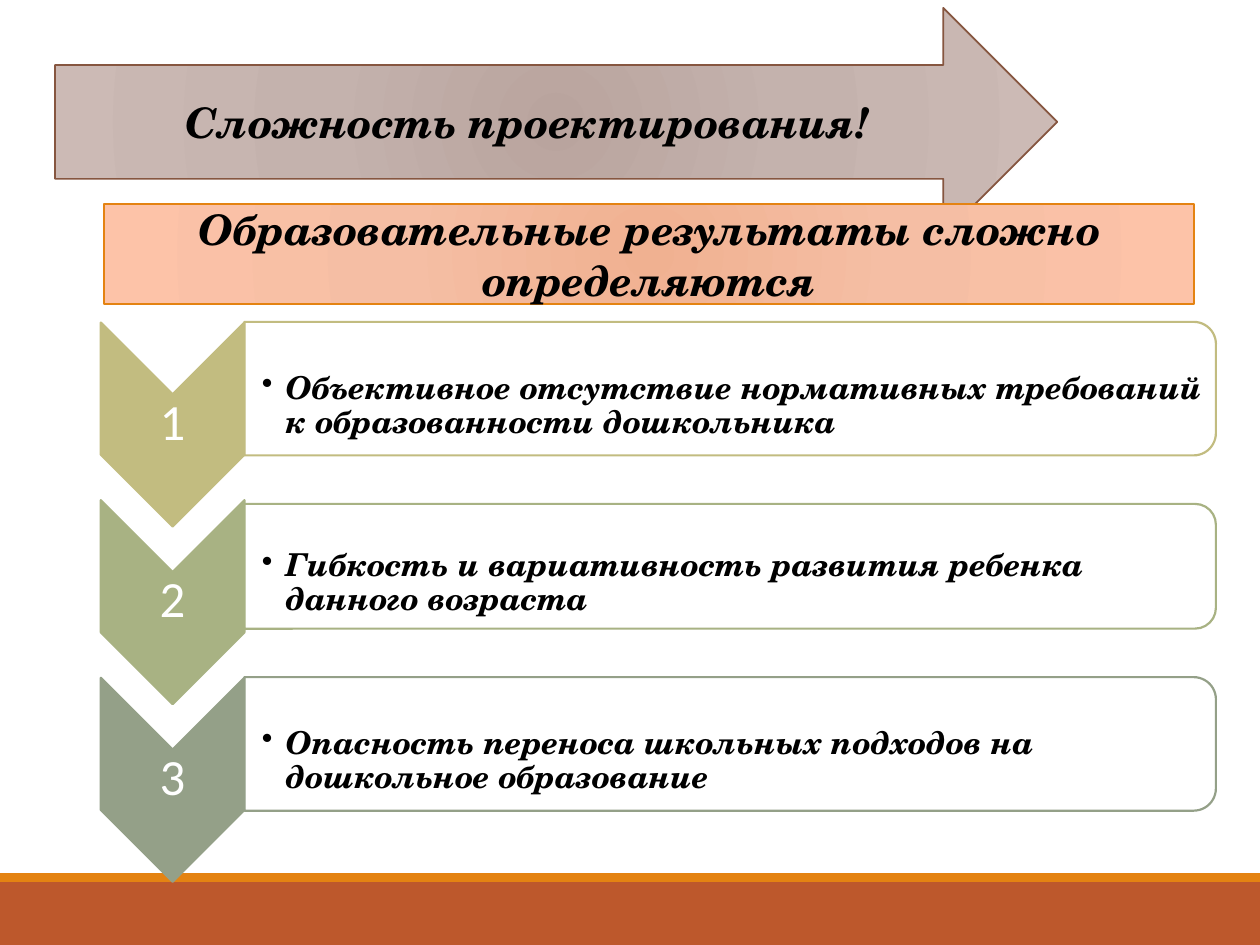
import pptx
import pptx.util
import pptx.dml.color
import pptx.enum.shapes
import pptx.enum.text
import pptx.oxml
import pptx.oxml.ns

Pt = pptx.util.Pt
SHAPES = pptx.enum.shapes.MSO_SHAPE
ALIGN = pptx.enum.text.PP_ALIGN
MIDDLE = pptx.enum.text.MSO_ANCHOR.MIDDLE

# Content
TITLE = "Сложность проектирования!"
THESIS = "Образовательные результаты сложно определяются"
# number, reason, colour, panel height
REASONS = [
    ("1", "Объективное отсутствие нормативных требований к образованности дошкольника", "khaki", 76.3),
    ("2", "Гибкость и вариативность развития ребенка данного возраста", "olive", 71.3),
    ("3", "Опасность переноса школьных подходов на дошкольное образование", "sage", 76.3),
]

COLOURS = {
    "rust": "BD582C", "orange": "E48312", "brown": "865640",
    "khaki": "C2BC80", "olive": "A8B283", "sage": "94A088",
    "white": "FFFFFF", "black": "000000",
}
GRADIENTS = {
    "taupe": [(0, "B9A49E"), (45, "C4B2AD"), (100, "CCBAB5")],
    "peach": [(0, "F0B191"), (45, "F5BEA4"), (100, "FDC3A8")],
}
SERIF, SANS = "TeX Gyre Schola", "Calibri"

# Layout, in points
SLIDE_W, SLIDE_H = 720, 540
CHEVRON_X, CHEVRON_W, CHEVRON_H = 57.6, 82.1, 116.6
FIRST_TOP, PITCH = 184.3, 101.5
PANEL_X, PANEL_W = CHEVRON_X + CHEVRON_W, 555.1
PANEL_CENTRE = 37.8
NUMBER_DROP, NUMBER_H = 40.3, 35.3
REASON_W, REASON_TOP_INSET = 551.5, 21


def rgb(name):
    return pptx.dml.color.RGBColor.from_string(COLOURS[name])


def add_block(kind, x, y, w, h, fill=None, line=None, weight=1.0):
    block = slide.shapes.add_shape(kind, Pt(x), Pt(y), Pt(w), Pt(h))
    block.shadow.inherit = False
    if fill:
        block.fill.solid()
        block.fill.fore_color.rgb = rgb(fill)
    else:
        block.fill.background()
    if line:
        block.line.color.rgb = rgb(line)
        block.line.width = Pt(weight)
    else:
        block.line.fill.background()
    return block


def add_turned(kind, x, y, w, h, fill, line):
    """Place a shape turned by 90 degrees so that it covers the box x, y, w, h."""
    block = add_block(kind, x + (w - h) / 2, y + (h - w) / 2, h, w, fill, line, 1.25)
    block.rotation = 90
    return block


def set_radial_fill(block, stops):
    gradient = pptx.oxml.parse_xml(
        f'<a:gradFill {pptx.oxml.ns.nsdecls("a")} rotWithShape="1"><a:gsLst>'
        + "".join(f'<a:gs pos="{pos * 1000}"><a:srgbClr val="{hexa}"/></a:gs>' for pos, hexa in stops)
        + '</a:gsLst><a:path path="circle">'
        '<a:fillToRect l="100000" t="100000" r="100000" b="100000"/></a:path></a:gradFill>')
    properties = block.element.spPr
    properties.replace(properties.find(pptx.oxml.ns.qn("a:noFill")), gradient)


def write(block, text, size, font, colour, align, emphasis=False):
    frame = block.text_frame
    frame.text = text
    frame.word_wrap = True
    frame.vertical_anchor = MIDDLE
    paragraph = frame.paragraphs[0]
    paragraph.alignment = align
    for run in paragraph.runs:
        run.font.size = Pt(size)
        run.font.name = font
        run.font.color.rgb = rgb(colour)
        run.font.bold = run.font.italic = emphasis
    return paragraph


def add_text(x, y, w, h, insets, *style):
    box = slide.shapes.add_textbox(Pt(x), Pt(y), Pt(w), Pt(h))
    frame = box.text_frame
    frame.margin_left, frame.margin_top, frame.margin_right, frame.margin_bottom = map(Pt, insets)
    paragraph = write(box, *style)
    paragraph.line_spacing = 0.9
    return paragraph


def add_bullet(paragraph, indent):
    properties = paragraph._p.get_or_add_pPr()
    properties.set("marL", str(Pt(indent)))
    properties.set("indent", str(-Pt(indent)))
    properties.append(pptx.oxml.parse_xml(
        f'<a:buChar {pptx.oxml.ns.nsdecls("a")} char="•"/>'))


presentation = pptx.Presentation()
presentation.slide_width, presentation.slide_height = Pt(SLIDE_W), Pt(SLIDE_H)
slide = presentation.slides.add_slide(presentation.slide_layouts[6])

# Footer bands
add_block(SHAPES.RECTANGLE, 0, 504, SLIDE_W, 36, "rust")
add_block(SHAPES.RECTANGLE, 0, 499, SLIDE_W, 5, "orange")

# Title arrow and thesis banner
headings = [
    (TITLE, SHAPES.RIGHT_ARROW, (31.5, 4.5, 572.7, 130.3), "brown", "taupe"),
    (THESIS, SHAPES.RECTANGLE, (59.6, 116.8, 622.8, 56.8), "orange", "peach"),
]
for text, kind, box, outline, gradient in headings:
    heading = add_block(kind, *box, line=outline)
    set_radial_fill(heading, GRADIENTS[gradient])
    write(heading, text, 24, SERIF, "black", ALIGN.CENTER, True)

# Numbered reasons
for index, (number, reason, colour, panel_h) in enumerate(REASONS):
    top = FIRST_TOP + index * PITCH
    panel_top = top + PANEL_CENTRE - panel_h / 2

    add_turned(SHAPES.CHEVRON, CHEVRON_X, top, CHEVRON_W, CHEVRON_H, colour, colour)
    add_text(CHEVRON_X, top + NUMBER_DROP, CHEVRON_W, NUMBER_H, (1.4, 1.4, 1.4, 1.4),
             number, 29, SANS, "white", ALIGN.CENTER)

    panel = add_turned(SHAPES.ROUND_2_SAME_RECTANGLE, PANEL_X, panel_top, PANEL_W, panel_h,
                       "white", colour)
    panel_colour = panel.element.spPr.find(".//" + pptx.oxml.ns.qn("a:srgbClr"))
    panel_colour.append(pptx.oxml.parse_xml(
        f'<a:alpha {pptx.oxml.ns.nsdecls("a")} val="90000"/>'))

    paragraph = add_text(PANEL_X, panel_top + 3.5, REASON_W, panel_h - 7.5,
                         (10, REASON_TOP_INSET, 0.7, 0.7),
                         reason, 18, SERIF, "black", ALIGN.LEFT, True)
    paragraph.space_after = Pt(2.7)
    add_bullet(paragraph, 13.5)

presentation.save("out.pptx")
